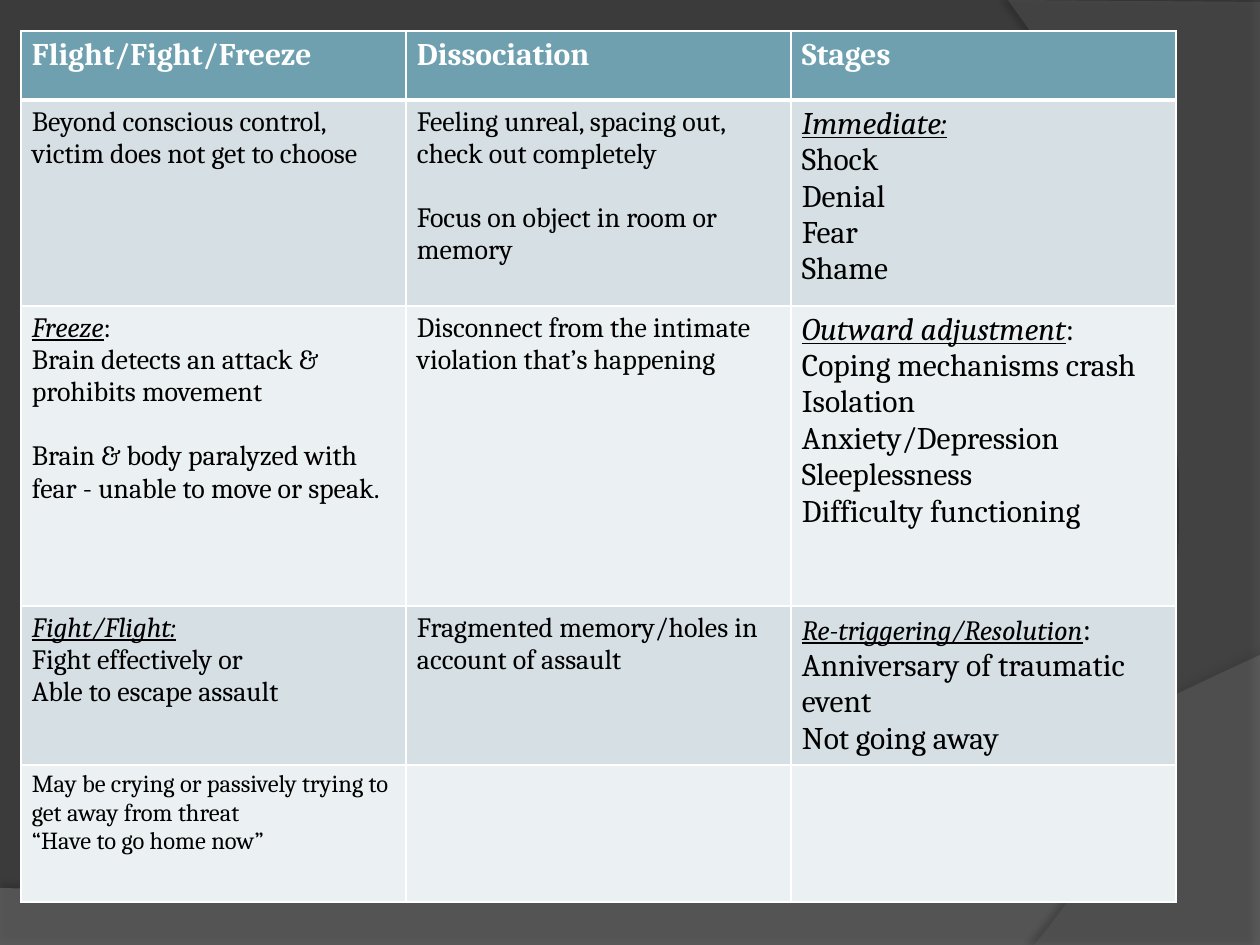
from dataclasses import dataclass
from lxml import etree
from pptx import Presentation
from pptx.dml.color import RGBColor as RGB
from pptx.oxml import parse_xml
from pptx.oxml.ns import nsdecls, qn
from pptx.util import Pt

PX = 914400 / 126


@dataclass(frozen=True)
class Theme:
    font: str = "Cambria"
    backdrop: str = "3B3B3B"
    header: str = "6EA0B0"
    bands: tuple = ("D5DFE4", "EBF0F2")
    white: str = "FFFFFF"
    black: str = "000000"
    large: int = 18
    medium: int = 16
    small: int = 14
    line_gap: float = 18.5


theme = Theme()


def px(length):
    return round(length * PX)


def write(paragraph, text, size=theme.medium, color=theme.black, bold=False, heading=False):
    run = paragraph.add_run()
    run.text = text
    font = run.font
    font.name, font.size, font.bold = theme.font, Pt(size), bold
    font.italic = font.underline = heading
    font.color.rgb = RGB.from_string(color)


prs = Presentation()
prs.slide_width, prs.slide_height = px(1260), px(945)
slide = prs.slides.add_slide(prs.slide_layouts[6])
slide.background.fill.solid()
slide.background.fill.fore_color.rgb = RGB.from_string(theme.backdrop)

swooshes = [
    dict(lead=[(0, 888), (0, 945), (1260, 945), (1260, 655)],
         curve=[(1260, 655), (704, 919), (493, 906), (0, 888)],
         color="7F7F7F", alpha=45, shade=35, distance=3.5, angle=270),
    dict(lead=[(1260, 2), (1260, 945), (1034, 945)],
         curve=[(1034, 945), (1178, 780), (1283, 378), (1008, 0)],
         color="5E5E5E", alpha=40, shade=45, distance=4, angle=180),
]
STEPS = 40
for swoosh in swooshes:
    arc = []
    for step in range(1, STEPS + 1):
        t = step / STEPS
        weights = ((1 - t) ** 3, 3 * t * (1 - t) ** 2, 3 * t * t * (1 - t), t ** 3)
        arc.append(tuple(sum(w * point[axis] for w, point in zip(weights, swoosh["curve"]))
                         for axis in (0, 1)))
    start, *corners = swoosh["lead"]
    outline = slide.shapes.build_freeform(*start, scale=PX)
    outline.add_line_segments(corners + arc, close=True)
    wave = outline.convert_to_shape()
    wave.line.fill.background()
    wave.fill.solid()
    wave.fill.fore_color.rgb = RGB.from_string(swoosh["color"])
    tint = wave.fill._xPr.find(".//" + qn("a:srgbClr"))
    etree.SubElement(tint, qn("a:alpha"), val=str(swoosh["alpha"] * 1000))
    wave.shadow.inherit = False
    wave._element.spPr.find(qn("a:effectLst")).append(parse_xml(
        f'<a:outerShdw {nsdecls("a")} blurRad="{Pt(4)}" dist="{Pt(swoosh["distance"])}" '
        f'dir="{swoosh["angle"] * 60000}" algn="ctr" rotWithShape="0">'
        f'<a:srgbClr val="{theme.black}"><a:alpha val="{swoosh["shade"] * 1000}"/></a:srgbClr>'
        '</a:outerShdw>'))

GAP = "gap"
S, M, L = theme.small, theme.medium, theme.large
titles = ["Flight/Fight/Freeze", "Dissociation", "Stages"]
responses = [
    [(M, None, ["Beyond conscious control, victim does not get to choose"]),
     (M, None, ["Feeling unreal, spacing out, check out completely", GAP,
                "Focus on object in room or memory"]),
     (L, [("Immediate:", L, True)], ["Shock", "Denial", "Fear", "Shame"])],
    [(M, [("Freeze", M, True), (":", M, False)],
      ["Brain detects an attack & prohibits movement", GAP,
       "Brain & body paralyzed with fear - unable to move or speak."]),
     (M, None, ["Disconnect from the intimate violation that’s happening"]),
     (L, [("Outward adjustment", L, True), (":", L, False)],
      ["Coping mechanisms crash", "Isolation", "Anxiety/Depression",
       "Sleeplessness", "Difficulty functioning"])],
    [(M, [("Fight/Flight:", M, True)], ["Fight effectively or", "Able to escape assault"]),
     (M, None, ["Fragmented memory/holes in account of assault"]),
     (L, [("Re-triggering/Resolution", M, True), (":", L, False)],
      ["Anniversary of traumatic event", "Not going away"])],
    [(S, None, ["May be crying or passively trying to get away from threat",
                "“Have to go home now”"]),
     (S, None, []), (S, None, [])],
]
row_heights = [69, 206, 300, 159, 137]
column_width = 385

grid = slide.shapes.add_table(5, 3, px(21), px(31), px(3 * column_width),
                              px(sum(row_heights))).table
for column in grid.columns:
    column.width = px(column_width)
for row, height in zip(grid.rows, row_heights):
    row.height = px(height)

for r in range(5):
    for c in range(3):
        cell = grid.cell(r, c)
        cell.margin_left = cell.margin_right = px(11)
        cell.margin_top = cell.margin_bottom = px(6)
        thick = {0: "lnB", 1: "lnT"}.get(r)
        for edge in ("lnL", "lnR", "lnT", "lnB"):
            cell._tc.get_or_add_tcPr().append(parse_xml(
                f'<a:{edge} {nsdecls("a")} w="{Pt(3 if edge == thick else 1)}"><a:solidFill>'
                f'<a:srgbClr val="{theme.white}"/></a:solidFill></a:{edge}>'))
        cell.fill.solid()
        cell.fill.fore_color.rgb = RGB.from_string(theme.bands[(r - 1) % 2] if r else theme.header)

        paragraph = cell.text_frame.paragraphs[0]
        if r == 0:
            write(paragraph, titles[c], size=L, color=theme.white, bold=True)
            continue
        size, heading, lines = responses[r - 1][c]
        for text, run_size, styled in heading or []:
            write(paragraph, text, size=run_size, heading=styled)
        gap_before = False
        for line in lines:
            if line == GAP:
                gap_before = True
                continue
            if paragraph.runs:
                paragraph = cell.text_frame.add_paragraph()
            if gap_before:
                paragraph.space_before = Pt(theme.line_gap)
                gap_before = False
            write(paragraph, line, size=size)

prs.save("out.pptx")
